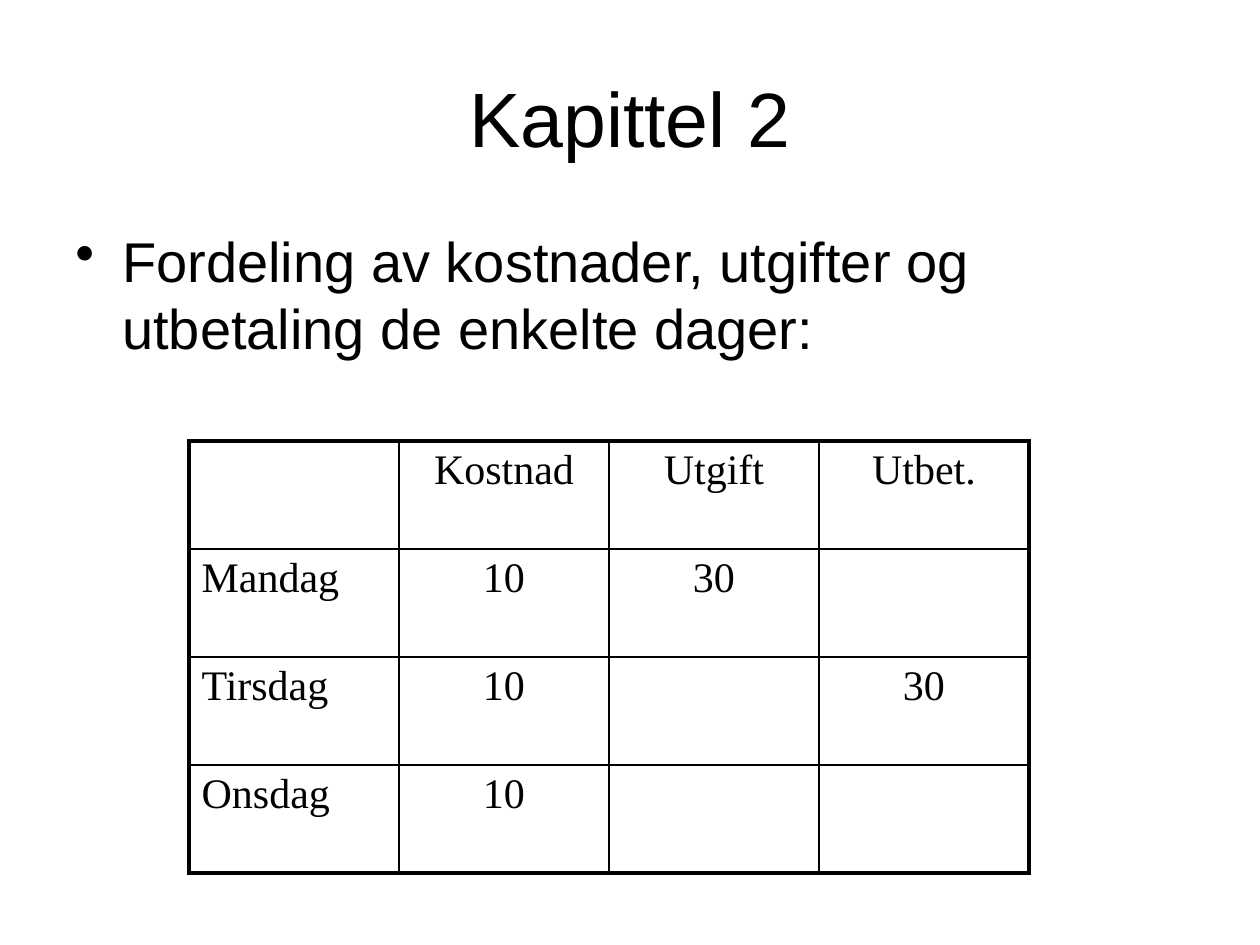
from dataclasses import dataclass

from lxml import etree
from pptx import Presentation
from pptx.dml.color import RGBColor
from pptx.enum.text import MSO_ANCHOR, PP_ALIGN
from pptx.oxml.ns import qn
from pptx.util import Emu, Pt

PX_PER_INCH = 126
BLACK = RGBColor(0x00, 0x00, 0x00)
LEFT = PP_ALIGN.LEFT
CENTER = PP_ALIGN.CENTER
MIDDLE = MSO_ANCHOR.MIDDLE
TOP = MSO_ANCHOR.TOP
OUTER_WIDTH = 2.25
INNER_WIDTH = 1
COLUMN_WIDTH = 210
ROW_HEIGHT = 108
BULLET_INDENT = 47


@dataclass(frozen=True)
class Box:
    left: int
    top: int
    width: int
    height: int


@dataclass(frozen=True)
class DayCosts:
    day: str
    cost: str
    expense: str
    payment: str

    def texts(self) -> list[str]:
        return [self.day, self.cost, self.expense, self.payment]


TITLE_BOX = Box(63, 38, 1134, 157)
BODY_BOX = Box(63, 220, 1134, 624)
TABLE_BOX = Box(189, 441, 4 * COLUMN_WIDTH, 4 * ROW_HEIGHT)
DAYS = [
    DayCosts("", "Kostnad", "Utgift", "Utbet."),
    DayCosts("Mandag", "10", "30", ""),
    DayCosts("Tirsdag", "10", "", "30"),
    DayCosts("Onsdag", "10", "", ""),
]


def px(length: int) -> Emu:
    return Emu(round(length * 914400 / PX_PER_INCH))


def bounds(box: Box) -> tuple[Emu, Emu, Emu, Emu]:
    return px(box.left), px(box.top), px(box.width), px(box.height)


def write(frame, text: str, font_name: str, size: int, align) -> None:
    frame.text = text
    paragraph = frame.paragraphs[0]
    paragraph.alignment = align
    paragraph.font.size = Pt(size)
    for run in paragraph.runs:
        run.font.name = font_name
        run.font.size = Pt(size)
        run.font.color.rgb = BLACK


def add_title(slide, text: str, box: Box) -> None:
    title = slide.shapes.title
    title.left, title.top, title.width, title.height = bounds(box)
    title.text_frame.vertical_anchor = MIDDLE
    write(title.text_frame, text, "Arial", 44, CENTER)


def add_bullet(slide, text: str, box: Box) -> None:
    frame = slide.shapes.add_textbox(*bounds(box)).text_frame
    frame.word_wrap = True
    frame.vertical_anchor = TOP
    write(frame, text, "Arial", 32, LEFT)
    paragraph = frame.paragraphs[0]
    paragraph.space_before = Pt(6.4)
    properties = paragraph._p.get_or_add_pPr()
    properties.set("marL", str(px(BULLET_INDENT)))
    properties.set("indent", str(-px(BULLET_INDENT)))
    bullet = etree.Element(qn("a:buChar"), char="•")
    properties.find(qn("a:spcBef")).addnext(bullet)


def set_borders(cell, widths: dict[str, float]) -> None:
    properties = cell._tc.get_or_add_tcPr()
    for position, (side, width) in enumerate(widths.items()):
        line = etree.Element(qn(f"a:{side}"), w=str(Pt(width)))
        fill = etree.SubElement(line, qn("a:solidFill"))
        etree.SubElement(fill, qn("a:srgbClr"), val=str(BLACK))
        properties.insert(position, line)


def add_cost_table(slide, days: list[DayCosts], box: Box) -> None:
    row_count, column_count = len(days), len(days[0].texts())
    table = slide.shapes.add_table(row_count, column_count, *bounds(box)).table
    table.first_row = False
    table.horz_banding = False
    for column in table.columns:
        column.width = px(COLUMN_WIDTH)
    for row in table.rows:
        row.height = px(ROW_HEIGHT)
    for row_index, day in enumerate(days):
        for column_index, text in enumerate(day.texts()):
            cell = table.cell(row_index, column_index)
            cell.fill.background()
            align = CENTER if column_index else LEFT
            write(cell.text_frame, text, "Times New Roman", 24, align)
            on_edge = {
                "lnL": column_index == 0,
                "lnR": column_index == column_count - 1,
                "lnT": row_index == 0,
                "lnB": row_index == row_count - 1,
            }
            set_borders(cell, {
                side: OUTER_WIDTH if edge else INNER_WIDTH
                for side, edge in on_edge.items()
            })


def main() -> None:
    presentation = Presentation()
    presentation.slide_width = px(1260)
    presentation.slide_height = px(945)
    slide = presentation.slides.add_slide(presentation.slide_layouts[5])
    add_title(slide, "Kapittel 2", TITLE_BOX)
    add_bullet(
        slide,
        "Fordeling av kostnader, utgifter og utbetaling de enkelte dager:",
        BODY_BOX,
    )
    add_cost_table(slide, DAYS, TABLE_BOX)
    presentation.save("out.pptx")


if __name__ == "__main__":
    main()
